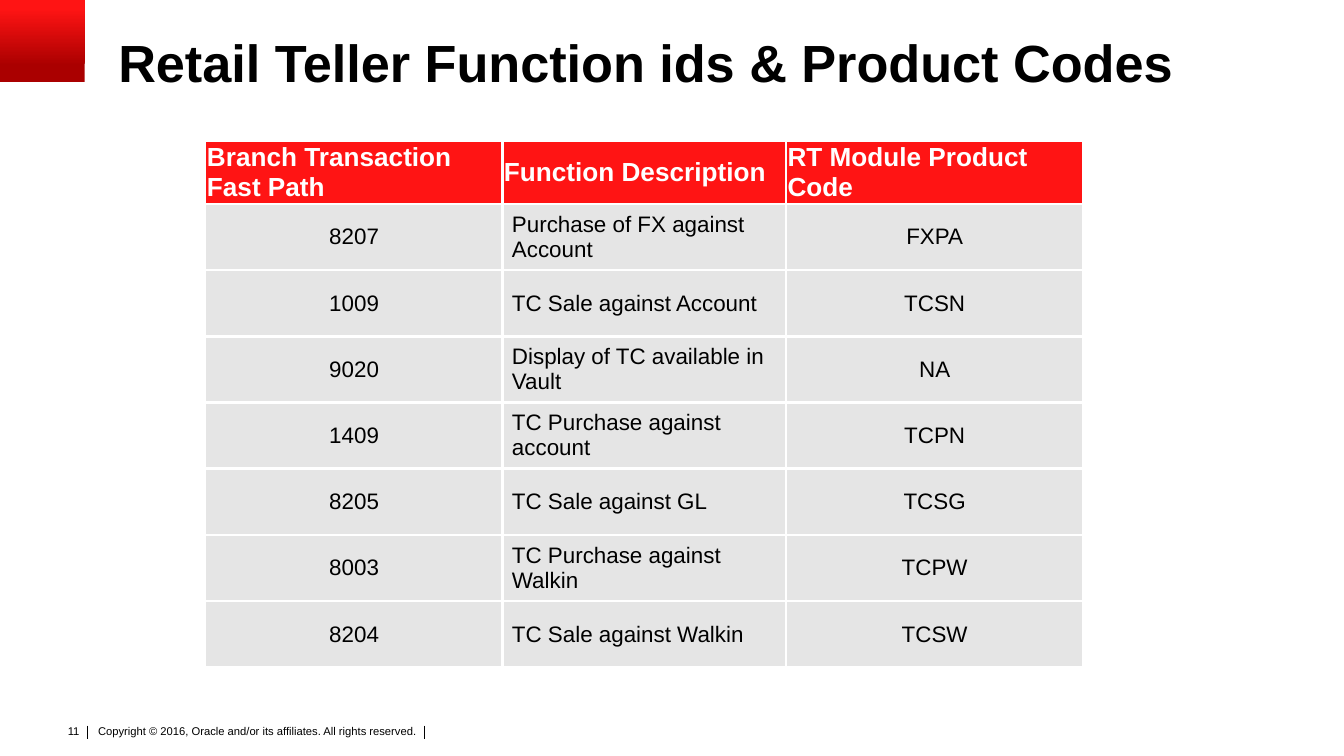
from dataclasses import dataclass

from lxml import etree
from pptx import Presentation
from pptx.dml.color import RGBColor
from pptx.enum import shapes, text
from pptx.oxml import ns
from pptx.util import Inches, Pt


@dataclass(frozen=True)
class Theme:
    font: str = "Arial"
    black: RGBColor = RGBColor(0, 0, 0)
    white: RGBColor = RGBColor(255, 255, 255)
    red: RGBColor = RGBColor(0xFF, 0x14, 0x14)
    dark_red: RGBColor = RGBColor(0xAA, 0, 0)
    gray: RGBColor = RGBColor(0xE5, 0xE5, 0xE5)
    title_size: int = 28
    header_size: int = 14
    body_size: int = 12
    footer_size: int = 6
    rule: float = 0.5
    border: float = 1.5


THEME = Theme()
SLIDE_WIDTH = 10

HEADERS = ["Branch Transaction Fast Path", "Function Description", "RT Module Product Code"]
FUNCTIONS = [
    ("8207", "Purchase of FX against Account", "FXPA"),
    ("1009", "TC Sale against Account", "TCSN"),
    ("9020", "Display of TC available in Vault", "NA"),
    ("1409", "TC Purchase against account", "TCPN"),
    ("8205", "TC Sale against GL", "TCSG"),
    ("8003", "TC Purchase against Walkin", "TCPW"),
    ("8204", "TC Sale against Walkin", "TCSW"),
]
COLUMN_WIDTHS = [2.21, 2.11, 2.21]
HEADER_HEIGHT, BODY_HEIGHT = 0.32, 3.45


def write(tf, content, size, color, bold=False, align=text.PP_ALIGN.LEFT):
    tf.text = content
    p = tf.paragraphs[0]
    p.alignment = align
    font = p.runs[0].font
    font.name, font.size, font.bold = THEME.font, Pt(size), bold
    font.color.rgb = color
    return p


def set_margins(frame, left, top, right, bottom):
    frame.margin_left, frame.margin_top = Inches(left), Inches(top)
    frame.margin_right, frame.margin_bottom = Inches(right), Inches(bottom)


def add_corner(s, left, top, width, height):
    sp = s.shapes.add_shape(shapes.MSO_SHAPE.RECTANGLE, Inches(left), Inches(top),
                            Inches(width), Inches(height))
    sp.shadow.inherit = False
    sp.line.fill.background()
    sp.fill.gradient()
    sp.fill.gradient_angle = 90
    stops = [(0.2, THEME.dark_red), (0.9, THEME.red)]
    for stop, (position, color) in zip(sp.fill.gradient_stops, stops):
        stop.position, stop.color.rgb = position, color


def set_title(s, left, top, width, height):
    sp = s.shapes.title
    sp.left, sp.top, sp.width, sp.height = map(Inches, (left, top, width, height))
    tf = sp.text_frame
    set_margins(tf, 0, 0, 0, 0)
    tf.word_wrap = True
    tf.auto_size = text.MSO_AUTO_SIZE.NONE
    tf.vertical_anchor = text.MSO_ANCHOR.MIDDLE
    p = write(tf, "Retail Teller Function ids & Product Codes",
              THEME.title_size, THEME.black, bold=True)
    p.line_spacing = 0.9


def set_borders(cell, edges):
    tc_pr = cell._tc.get_or_add_tcPr()
    for index, edge in enumerate(edges):
        ln = etree.Element(ns.qn(f"a:ln{edge}"), w=str(Pt(THEME.border)))
        fill = etree.SubElement(ln, ns.qn("a:solidFill"))
        etree.SubElement(fill, ns.qn("a:srgbClr"), val=str(THEME.white))
        tc_pr.insert(index, ln)


def add_function_table(s, left, top):
    rows = [HEADERS, *FUNCTIONS]
    heights = [HEADER_HEIGHT] + [BODY_HEIGHT / len(FUNCTIONS)] * len(FUNCTIONS)
    table = s.shapes.add_table(len(rows), len(HEADERS), Inches(left), Inches(top),
                               Inches(sum(COLUMN_WIDTHS)), Inches(sum(heights))).table
    table.horz_banding = False
    for column, width in zip(table.columns, COLUMN_WIDTHS):
        column.width = Inches(width)
    for i, values in enumerate(rows):
        table.rows[i].height = Inches(heights[i])
        for j, value in enumerate(values):
            cell = table.cell(i, j)
            cell.vertical_anchor = text.MSO_ANCHOR.MIDDLE
            cell.fill.solid()
            if i == 0:
                cell.fill.fore_color.rgb = THEME.red
                set_margins(cell, 0.01, 0, 0.01, 0)
                write(cell.text_frame, value, THEME.header_size, THEME.white, bold=True)
            else:
                cell.fill.fore_color.rgb = THEME.gray
                set_margins(cell, 0.07, 0, 0.07, 0)
                align = text.PP_ALIGN.LEFT if j == 1 else text.PP_ALIGN.CENTER
                write(cell.text_frame, value, THEME.body_size, THEME.black, align=align)
            inner = {"L": j > 0, "R": j < len(HEADERS) - 1,
                     "T": i > 0, "B": i < len(rows) - 1}
            set_borders(cell, [edge for edge, shown in inner.items() if shown])


def add_footer(s, left, top):
    notice = s.shapes.add_textbox(Inches(left + 0.3), Inches(top + 0.03),
                                  Inches(2.74), Inches(0.24)).text_frame
    notice.word_wrap = True
    set_margins(notice, 0.04, 0.02, 0.04, 0.02)
    write(notice, "Copyright © 2016, Oracle and/or its affiliates. All rights reserved.",
          THEME.footer_size, THEME.black)

    for x in (left + 0.26, left + 2.77):
        rule = s.shapes.add_connector(shapes.MSO_CONNECTOR.STRAIGHT, Inches(x),
                                      Inches(top + 0.06), Inches(x), Inches(top + 0.16))
        rule.line.color.rgb = THEME.black
        rule.line.width = Pt(THEME.rule)
        etree.SubElement(rule._element.spPr, ns.qn("a:effectLst"))

    number = s.shapes.add_textbox(Inches(left), Inches(top), Inches(0.3), Inches(0.2)).text_frame
    number.word_wrap = False
    write(number, "11", THEME.footer_size, THEME.black, align=text.PP_ALIGN.RIGHT)


def main():
    prs = Presentation()
    prs.slide_width, prs.slide_height = Inches(SLIDE_WIDTH), Inches(SLIDE_WIDTH * 9 / 16)
    s = prs.slides.add_slide(prs.slide_layouts[5])
    add_footer(s, 0.39, 5.34)
    add_corner(s, 0, 0, 0.63, 0.61)
    set_title(s, 0.88, 0.27, 9, 0.44)
    add_function_table(s, 1.53, 1.05)
    prs.save("out.pptx")


if __name__ == "__main__":
    main()
